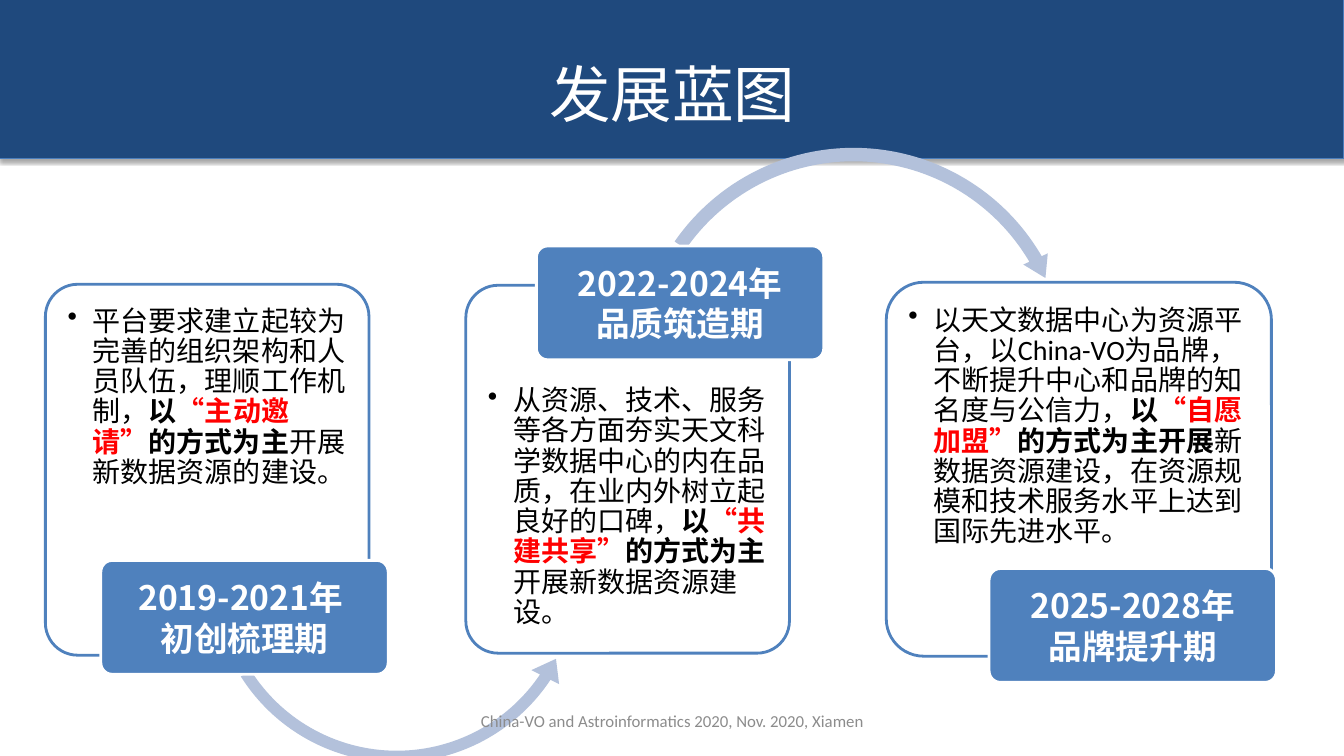
import pptx
import pptx.util
import pptx.dml.color
import pptx.enum.shapes
import pptx.enum.text
import pptx.oxml
import pptx.oxml.ns
from dataclasses import dataclass
from lxml import etree

Inches = pptx.util.Inches
Pt = pptx.util.Pt
Kind = pptx.enum.shapes.MSO_SHAPE
Align = pptx.enum.text.PP_ALIGN
Anchor = pptx.enum.text.MSO_ANCHOR
qn = pptx.oxml.ns.qn


@dataclass
class Theme:
    """Hold the colours, fonts and type sizes."""
    navy: str = "1F497D"
    edge: str = "4B7EBC"
    blue: str = "4F81BD"
    pale: str = "B3C1DB"
    white: str = "FFFFFF"
    black: str = "000000"
    red: str = "FF0000"
    grey: str = "8C8C8C"
    latin: str = "Calibri"
    asian: str = "Noto Sans CJK SC"
    title: int = 44
    label: int = 24
    body: int = 20
    foot: int = 12


look = Theme()


def rgb(tint):
    """Turn a hex string into a colour."""
    return pptx.dml.color.RGBColor.from_string(tint)


def shape(slide, kind, box, fill, line=None, width=2):
    """Add a filled preset shape without shadow."""
    item = slide.shapes.add_shape(kind, *map(Inches, box))
    item.shadow.inherit = False
    item.fill.solid()
    item.fill.fore_color.rgb = rgb(fill)
    if line:
        item.line.color.rgb = rgb(line)
        item.line.width = Pt(width)
    else:
        item.line.fill.background()
    return item


def frame(item, pad, anchor):
    """Set margins, wrapping and anchor of a text frame."""
    text = item.text_frame
    text.word_wrap = True
    text.vertical_anchor = anchor
    text.margin_left = text.margin_right = Inches(pad[0])
    text.margin_top = text.margin_bottom = Inches(pad[1])
    return text


def write(para, words, size, font, tint, bold=False):
    """Add one run to a paragraph."""
    run = para.add_run()
    run.text = words
    run.font.size = Pt(size)
    run.font.bold = bold
    run.font.name = font
    run.font.color.rgb = rgb(tint)
    props = run.font._element
    props.set("lang", "zh-CN")
    east = etree.SubElement(props, qn("a:ea"))
    east.set("typeface", look.asian)


def line(slide, box, words, size, font, tint):
    """Add one centred line of text."""
    item = slide.shapes.add_textbox(*map(Inches, box))
    para = frame(item, (0.1, 0.05), Anchor.MIDDLE).paragraphs[0]
    para.alignment = Align.CENTER
    write(para, words, size, font, tint)


def header(slide, box):
    """Draw the title band with its soft shadow."""
    left, top, width, height = box
    band = shape(slide, Kind.RECTANGLE, box, look.navy, look.edge, 0.75)
    glow = band._element.spPr.find(qn("a:effectLst"))
    shade = etree.SubElement(glow, qn("a:outerShdw"), blurRad=str(Pt(3.1)),
                             dist=str(Pt(1.8)), dir="5400000", rotWithShape="0")
    tint = etree.SubElement(shade, qn("a:srgbClr"), val=look.black)
    etree.SubElement(tint, qn("a:alpha"), val="35000")
    line(slide, (left + 0.67, top + 0.35, width - 1.33, 1.25), "发展蓝图",
         look.title, look.asian, look.white)


def card(slide, box, drop, parts):
    """Draw a rounded card with one bulleted text, set down by drop."""
    left, top, width, height = box
    panel = shape(slide, Kind.ROUNDED_RECTANGLE, box, look.white, look.blue)
    panel.adjustments[0] = 0.1
    tint = panel._element.spPr.find(qn("a:solidFill"))[0]
    etree.SubElement(tint, qn("a:alpha"), val="90000")
    item = slide.shapes.add_textbox(*map(Inches, (
        left + 0.08, top + drop, width - 0.17, height - 0.95)))
    para = frame(item, (0.14, 0.14), Anchor.TOP).paragraphs[0]
    props = para._p.get_or_add_pPr()
    props.set("marL", str(Inches(0.25)))
    props.set("indent", str(-Inches(0.25)))
    props.set("hangingPunct", "0")
    etree.SubElement(props, qn("a:buChar"), char="•")
    para.line_spacing = Pt(21.6)
    lead, quote, mode, rest = parts
    for words, tint, bold in ((lead, look.black, False), ("以", look.black, True),
                              (quote, look.red, True), (mode, look.black, True),
                              (rest, look.black, False)):
        write(para, words, look.body, look.latin, tint, bold)


def label(slide, box, lines):
    """Draw a blue label with the years and name of a stage."""
    item = shape(slide, Kind.ROUNDED_RECTANGLE, box, look.blue, look.white)
    item.adjustments[0] = 0.1
    text = frame(item, (0.08, 0.06), Anchor.MIDDLE)
    for rank, words in enumerate(lines):
        para = text.add_paragraph() if rank else text.paragraphs[0]
        para.alignment = Align.CENTER
        para.line_spacing = Pt(29)
        write(para, words, look.label, look.asian, look.white, True)


def arrow(slide, kind, box, bends):
    """Draw a curved arrow to the next stage."""
    item = shape(slide, kind, box, look.pale)
    for rank, bend in enumerate(bends):
        item.adjustments[rank] = bend


STAGES = (
    ((0.45, 2.82, 3.21, 3.68), 0.08, (1, 5.56),
     ("平台要求建立起较为完善的组织架构和人员队伍，理顺工作机制，",
      "“主动邀请”", "的方式为主", "开展新数据资源的建设。"),
     ("2019-2021年 ", "初创梳理期"),
     (Kind.LEFT_CIRCULAR_ARROW, (2.01, 3.81, 3.85, 3.85),
      (0.03, 4.09, 20.23, 88.63, 0.04))),
    ((4.62, 2.83, 3.21, 3.65), 0.86, (5.32, 2.44),
     ("从资源、技术、服务等各方面夯实天文科学数据中心的内在品质，在业内外树立起良好的口碑，",
      "“共建共享”", "的方式为主", "开展新数据资源建设。"),
     ("2022-2024年", "品质筑造期"),
     (Kind.CIRCULAR_ARROW, (6.24, 1.4, 4.45, 4.45),
      (0.03, 3.5, 197.81, 128.83, 0.03))),
    ((8.79, 2.8, 3.82, 3.71), 0.09, (9.81, 5.64),
     ("以天文数据中心为资源平台，以China-VO为品牌，不断提升中心和品牌的知名度与公信力，",
      "“自愿加盟”", "的方式为主开展",
      "新数据资源建设，在资源规模和技术服务水平上达到国际先进水平。"),
     ("2025-2028年", "品牌提升期"), None),
)


def main():
    """Build the slide and save it."""
    deck = pptx.Presentation()
    deck.slide_width = Inches(13.33)
    deck.slide_height = Inches(7.5)
    slide = deck.slides.add_slide(deck.slide_layouts[6])
    header(slide, (0, -0.05, 13.33, 1.62))
    for box, drop, spot, parts, lines, curve in STAGES:
        card(slide, box, drop, parts)
        if curve:
            arrow(slide, *curve)
        label(slide, (*spot, 2.85, 1.13), lines)
    line(slide, (4.56, 6.95, 4.22, 0.4),
         "China-VO and Astroinformatics 2020, Nov. 2020, Xiamen",
         look.foot, look.latin, look.grey)
    deck.save("out.pptx")


if __name__ == "__main__":
    main()
